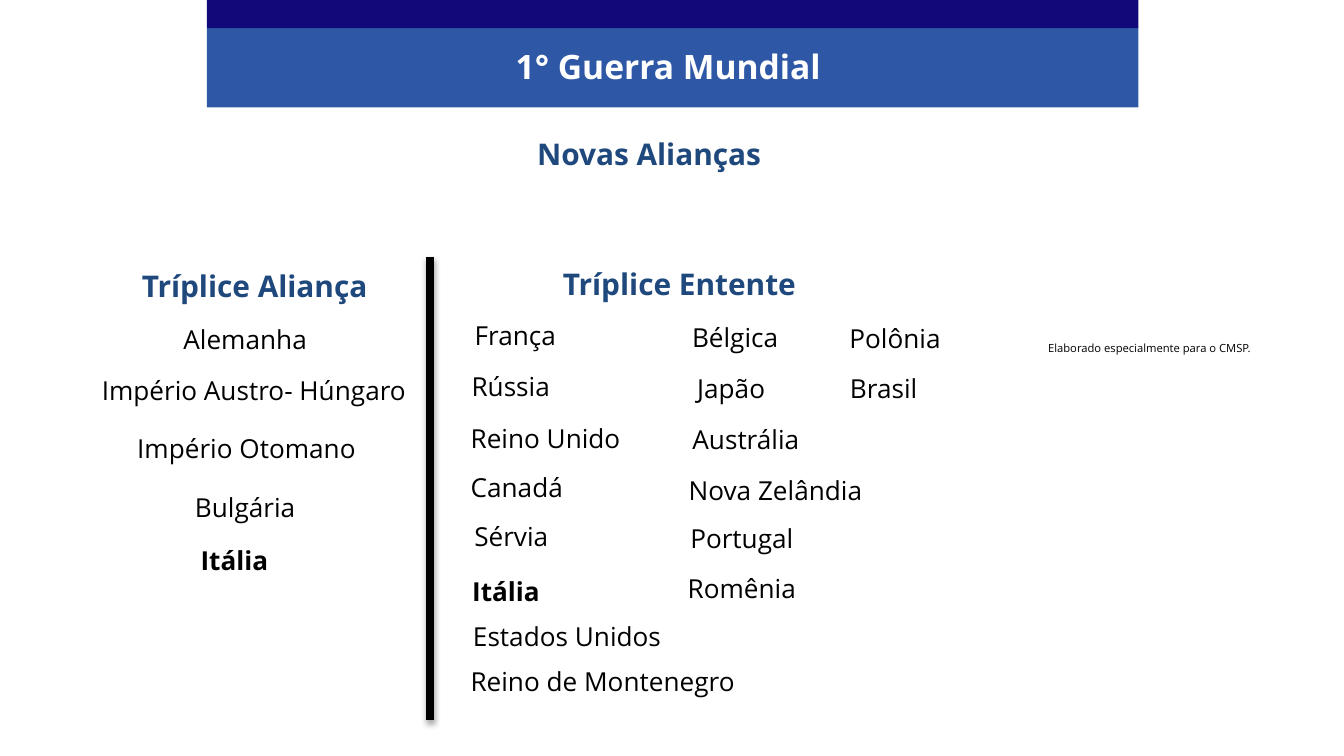
from dataclasses import dataclass

from lxml import etree
from pptx import Presentation
from pptx.dml.color import RGBColor as RGB
from pptx.enum.shapes import MSO_CONNECTOR as CONN, MSO_SHAPE as SHAPE
from pptx.enum.text import MSO_ANCHOR as ANCHOR, MSO_AUTO_SIZE as AUTO, PP_ALIGN as ALIGN
from pptx.oxml.ns import qn
from pptx.util import Inches, Pt


@dataclass(frozen=True)
class Theme:
    font: str = "Open Sans"
    navy: str = "110979"
    blue: str = "2E58A6"
    heading: str = "1F497D"
    white: str = "FFFFFF"
    black: str = "000000"
    title_size: int = 18
    heading_size: int = 16
    body_size: int = 14
    credit_size: int = 6


T = Theme()
ROW_H = 0.34
HEAD_H = 0.37

ALLIANCE = [
    ("Alemanha", 0.32, 0.42, 2.23, False),
    ("Império Austro- Húngaro", 0, 0.80, 3, False),
    ("Império Otomano", 0.33, 1.23, 2.23, False),
    ("Bulgária", 0.32, 1.67, 2.23, False),
    ("Itália ", 0.83, 2.06, 1.1, True),
]
ENTENTE = [
    ("França", 0.03, 0.40, 1.13, False),
    ("Rússia", 0, 0.78, 1.12, False),
    ("Reino Unido", 0.12, 1.16, 1.4, False),
    ("Canadá", 0.16, 1.53, 0.89, False),
    ("Sérvia", 0.16, 1.89, 0.81, False),
    ("Itália", 0.12, 2.30, 0.81, True),
    ("Estados Unidos", 0.16, 2.64, 1.64, False),
    ("Reino de Montenegro", 0.14, 2.97, 2.21, False),
    ("Bélgica", 1.34, 0.41, 1.78, False),
    ("Japão", 1.31, 0.79, 1.78, False),
    ("Austrália", 1.42, 1.17, 1.78, False),
    ("Nova Zelândia", 1.64, 1.55, 1.78, False),
    ("Portugal", 1.72, 1.91, 1.12, False),
    ("Romênia", 1.72, 2.28, 1.12, False),
    ("Polônia", 2.96, 0.42, 0.92, False),
    ("Brasil", 2.93, 0.79, 0.81, False),
]


def write(sp, text, size=T.body_size, color=T.black, bold=False, align=ALIGN.CENTER):
    tf = sp.text_frame
    tf.word_wrap = True
    tf.auto_size = AUTO.SHAPE_TO_FIT_TEXT
    tf.vertical_anchor = ANCHOR.TOP
    p = tf.paragraphs[0]
    p.alignment = align
    r = p.add_run()
    r.text = text
    r.font.name = T.font
    r.font.size = Pt(size)
    r.font.bold = bold
    r.font.color.rgb = RGB.from_string(color)


def add_text(s, x, y, w, h, text, **fmt):
    sp = s.shapes.add_textbox(Inches(x), Inches(y), Inches(w), Inches(h))
    write(sp, text, **fmt)


def add_heading(s, x, y, w, text):
    add_text(s, x, y, w, HEAD_H, text, size=T.heading_size, color=T.heading, bold=True)


def add_banner(s, x, y, w, h, text):
    strip_h = 0.21
    group = s.shapes.add_group_shape()
    for top, height, color in ((y + strip_h, h - strip_h, T.blue), (y, strip_h, T.navy)):
        bar = group.shapes.add_shape(SHAPE.RECTANGLE, Inches(x), Inches(top), Inches(w), Inches(height))
        bar.shadow.inherit = False
        bar.fill.solid()
        bar.fill.fore_color.rgb = RGB.from_string(color)
        bar.line.fill.background()
    title = s.shapes.title
    title.left, title.top, title.width, title.height = map(Inches, (x, y + 0.29, w, 0.4))
    write(title, text, size=T.title_size, color=T.white, bold=True)
    s.shapes._spTree.append(title._element)


def add_bloc(s, x, y, heading, heading_x, countries):
    add_heading(s, x + heading_x, y, 2.23, heading)
    for name, dx, dy, w, bold in countries:
        add_text(s, x + dx, y + dy, w, ROW_H, name, bold=bold)


def add_divider(s, x, y, h):
    line = s.shapes.add_connector(CONN.STRAIGHT, Inches(x), Inches(y), Inches(x), Inches(y + h))
    line.line.color.rgb = RGB.from_string(T.black)
    line.line.width = Pt(4.5)
    effects = etree.SubElement(line._element.spPr, qn("a:effectLst"))
    shadow = etree.SubElement(effects, qn("a:outerShdw"), blurRad=str(Pt(3.1)),
                              dist=str(Pt(1.8)), dir="5400000", rotWithShape="0")
    color = etree.SubElement(shadow, qn("a:srgbClr"), val=T.black)
    etree.SubElement(color, qn("a:alpha"), val="35000")


def main():
    prs = Presentation()
    prs.slide_width = Inches(10)
    prs.slide_height = prs.slide_width * 9 // 16
    s = prs.slides.add_slide(prs.slide_layouts[5])
    add_banner(s, 1.54, 0, 6.93, 0.8, "1° Guerra Mundial ")
    add_heading(s, 1.65, 0.96, 6.36, "Novas Alianças")
    add_bloc(s, 0.39, 1.94, "Tríplice Aliança", 0.39, ALLIANCE)
    add_divider(s, 3.2, 1.91, 3.45)
    add_bloc(s, 3.24, 1.93, "Tríplice Entente", 0.7, ENTENTE)
    add_text(s, 7.7, 2.49, 1.81, 0.2, "Elaborado especialmente para o CMSP.",
             size=T.credit_size, align=ALIGN.LEFT)
    prs.save("out.pptx")


if __name__ == "__main__":
    main()
